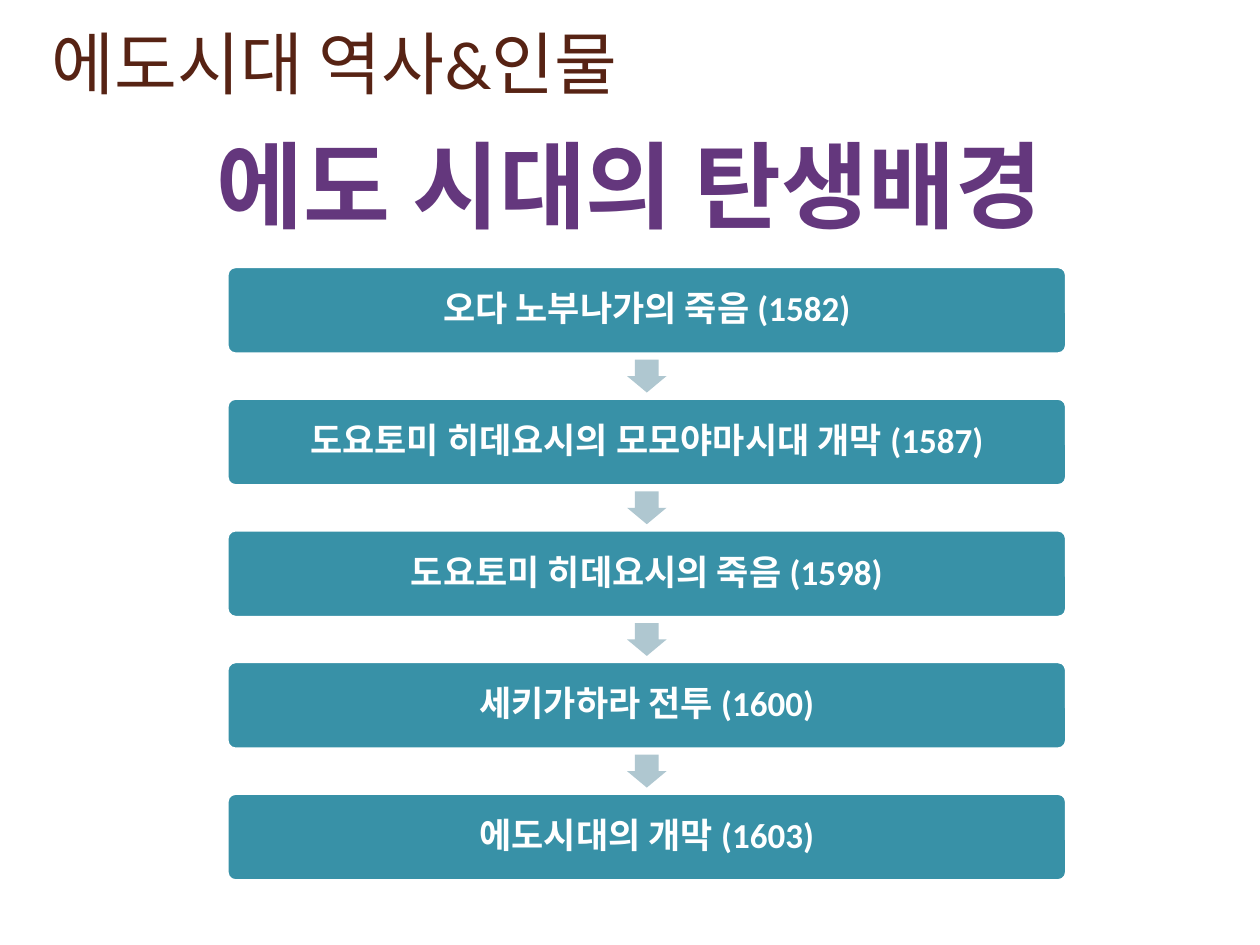
from pptx import Presentation
from pptx.dml.color import RGBColor
from pptx.enum import shapes, text
from pptx.util import Pt


def paint(part, color):
    part.solid()
    part.fore_color.rgb = RGBColor.from_string(color)


def write(frame, words, size, color, bold=False):
    frame.text = words
    frame.word_wrap = True
    frame.auto_size = text.MSO_AUTO_SIZE.NONE
    font = frame.paragraphs[0].runs[0].font
    font.name, font.size, font.bold = "Calibri", Pt(size), bold
    paint(font.fill, color)
    return frame.paragraphs[0]


deck = Presentation()
deck.slide_width, deck.slide_height = Pt(720), Pt(540)
slide = deck.slides.add_slide(deck.slide_layouts[5])

# Section heading
head = slide.shapes.add_textbox(Pt(22.3), Pt(5.8), Pt(368.6), Pt(56.9))
head.text_frame.vertical_anchor = text.MSO_ANCHOR.BOTTOM
para = write(head.text_frame, "에도시대 역사&인물", 39, "572314")
para.runs[0].font._element.set("spc", "10")

# Title
title = slide.shapes.title
title.left, title.top, title.width, title.height = Pt(67.7), Pt(73.4), Pt(584), Pt(67.7)
title.text_frame.vertical_anchor = text.MSO_ANCHOR.BOTTOM
para = write(title.text_frame, "에도 시대의 탄생배경", 54, "64377D", True)
para.alignment = text.PP_ALIGN.CENTER
para.line_spacing = Pt(20)

# Flow of events, with an arrow centred in each gap
steps = [
    "오다 노부나가의 죽음 (1582)",
    "도요토미 히데요시의 모모야마시대 개막 (1587)",
    "도요토미 히데요시의 죽음 (1598)",
    "세키가하라 전투 (1600)",
    "에도시대의 개막 (1603)",
]
left, top, wide, high, pitch = 129.6, 152.2, 480, 50.2, 75.25
long, thick = 18.8, 22.6

for i, step in enumerate(steps):
    y = top + i * pitch
    box = slide.shapes.add_shape(
        shapes.MSO_SHAPE.ROUNDED_RECTANGLE, Pt(left), Pt(y), Pt(wide), Pt(high))
    box.adjustments[0] = 0.1
    box.shadow.inherit = False
    paint(box.fill, "3891A7")
    paint(box.line.fill, "FFFFFF")
    box.line.width = Pt(2)
    frame = box.text_frame
    frame.margin_left = frame.margin_right = Pt(6)
    frame.margin_top = frame.margin_bottom = Pt(6)
    frame.vertical_anchor = text.MSO_ANCHOR.MIDDLE
    para = write(frame, step, 20, "FFFFFF", True)
    para.alignment = text.PP_ALIGN.CENTER
    para.line_spacing = 0.9

    if i < len(steps) - 1:
        mid = y + (high + pitch) / 2
        arrow = slide.shapes.add_shape(
            shapes.MSO_SHAPE.RIGHT_ARROW, Pt(left + (wide - long) / 2),
            Pt(mid - thick / 2), Pt(long), Pt(thick))
        arrow.rotation = 90
        arrow.adjustments[0] = 0.6
        arrow.adjustments[1] = 0.5
        arrow.shadow.inherit = False
        paint(arrow.fill, "AFC7D0")
        arrow.line.fill.background()

deck.save("out.pptx")
